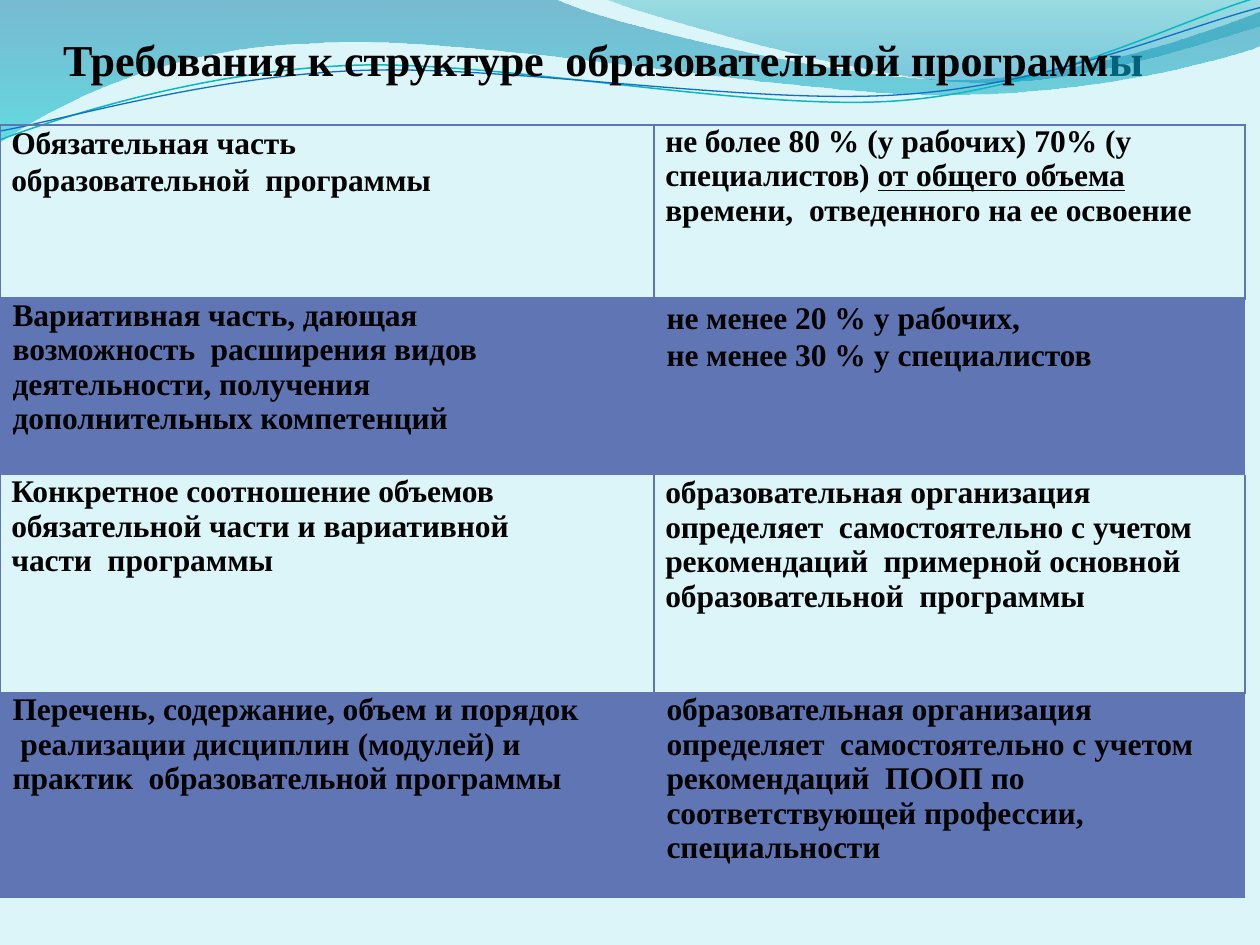
"""Build the slide on the structure requirements of an educational programme."""
import math
from lxml import etree
from pptx import Presentation
from pptx import util as u
from pptx.dml import color
from pptx.enum import text
from pptx.oxml import ns

FONT, BLUE = "Times New Roman", "6076B4"

prs = Presentation()
prs.slide_width, prs.slide_height = u.Inches(10), u.Inches(7.5)
STEP = prs.slide_width // 1000
s = prs.slides.add_slide(prs.slide_layouts[6])


def rgb(code):
    return color.RGBColor.from_string(code)


def add_runs(p, marked, size):
    for i, part in enumerate(marked.split("|")):
        if not part:
            continue
        r = p.add_run()
        r.text = part
        r.font.name, r.font.size, r.font.bold = FONT, u.Pt(size), True
        r.font.color.rgb = rgb("000000")
        if part in ("от ", "общего ", "объема "):
            r.font.underline = True
        r._r.get_or_add_rPr().set("spc", "0" if i % 2 else "-5")


s.background.fill.solid()
s.background.fill.fore_color.rgb = rgb("DBF5F9")

waves = [
    ((-1, -1, 1002, 114), 0,
     [(0, 0), (440, -1), (476, 17, 664, 63, 758, 63), (853, 63, 958, 26, 1000, 9),
      (1001, 36), (983, 44, 870, 76, 746, 75), (622, 75, 382, 28, 257, 34),
      (129, 36, 46, 83, -1, 113)], [("0074A1", 45), ("00C6CF", 55)], None),
    ((479, -1, 521, 70), 0,
     [(479, -1), (509, 11, 682, 62, 769, 65), (856, 69, 961, 32, 1000, 21),
      (1000, 0)], [("00A1A9", 30), ("008BBF", 45)], None),
    ((-2, 22, 1002, 71), 357.3,
     [(0, 111), (48, 93, 158, 57, 277, 52), (395, 47, 593, 89, 713, 80),
      (833, 71, 938, 15, 998, -2)], None, ("0AB8BF", 0.85)),
    ((-2, 30, 1003, 58), 357.3,
     [(0, 104), (47, 96, 164, 61, 283, 56), (403, 51, 597, 84, 717, 75),
      (836, 67, 941, 21, 1000, 6)], None, ("0F6FC6", 0.75)),
]
for (left, top, width, height), turn, segments, stops, stroke in waves:
    anchors = [(x * STEP, y * STEP) for *_, x, y in segments]
    builder = s.shapes.build_freeform(*anchors[0])
    builder.add_line_segments(anchors[1:], close=bool(stops))
    sp = builder.convert_to_shape()
    sp.shadow.inherit = False
    sp.left, sp.top, sp.width, sp.height = (v * STEP for v in (left, top, width, height))
    sp.rotation = turn
    outline = next(sp._element.spPr.iter(ns.qn("a:path")))
    outline.set("w", str(width * STEP))
    outline.set("h", str(height * STEP))
    cos, sin = math.cos(math.radians(-turn)), math.sin(math.radians(-turn))
    for seg, command in zip(segments, list(outline)):
        if len(seg) == 6:
            command.tag = ns.qn("a:cubicBezTo")
        for pt in list(command):
            command.remove(pt)
        for x, y in zip(seg[::2], seg[1::2]):
            dx, dy = x - left - width / 2, y - top - height / 2
            etree.SubElement(command, ns.qn("a:pt"),
                             x=str(round((dx * cos - dy * sin + width / 2) * STEP)),
                             y=str(round((dx * sin + dy * cos + height / 2) * STEP)))
    if stops:
        sp.line.fill.background()
        sp.fill.gradient()
        sp.fill.gradient_angle = 270
        for stop, (code, opacity), place in zip(sp.fill.gradient_stops, stops, (0, 1)):
            stop.color.rgb, stop.position = rgb(code), place
        for srgb, (code, opacity) in zip(sp._element.spPr.iter(ns.qn("a:srgbClr")), stops):
            etree.SubElement(srgb, ns.qn("a:alpha"), val=str(opacity * 1000))
    else:
        sp.fill.background()
        sp.line.color.rgb, sp.line.width = rgb(stroke[0]), u.Pt(stroke[1])

sp = s.shapes.add_textbox(50 * STEP, 21 * STEP, 922 * STEP, 47 * STEP)
tf = sp.text_frame
tf.word_wrap, tf.vertical_anchor = True, text.MSO_ANCHOR.BOTTOM
tf.margin_left = tf.margin_right = tf.margin_bottom = 0
p = tf.paragraphs[0]
add_runs(p, "Требования |к |структуре  образовательной программ||ы", 25.2)
p.runs[-1].font.color.rgb = rgb("04617B")

columns, heights = (519, 469), (138, 140, 173, 163)
borders = [{"L": 1, "R": 1, "T": 1, "B": 2}, {"T": 2}, {"L": 1, "R": 1, "B": 1}, {"T": 1}]
rows = [
    [(110, 21, 3.3, ["Обязательная часть образовательной  программы"]),
     (20, 0.99, 2.2, ["не более |80 % (у |рабочих) |70% (у  |специалистов) ||от |общего |"
                      "объема |времени,  |отведенного на |ее |освоение"])],
    [(90, 0.99, 3.7, ["Вариативная часть, дающая возможность  расширения видов "
                      "деятельности, получения  дополнительных компетенций"]),
     (20, 21.3, 3.6, ["не менее |20 % у |рабочих,", "не менее |30 % у |специалистов"])],
    [(90, 0.99, 2.2, ["Конкретное соотношение объемов  обязательной части |и |"
                      "вариативной части  программы"]),
     (20, 1.0, 2, ["образовательная организация определяет  самостоятельно |с |"
                   "учетом рекомендаций  примерной основной образовательной  программы"])],
    [(58, 0.99, 2.7, ["Перечень, содержание, объем |и |порядок  реализации |дисциплин |"
                      "(модулей) |и |практик  образовательной |программы"]),
     (20, 0.99, 2.7, ["образовательная организация определяет  самостоятельно |с |"
                      "учетом рекомендаций  |ПООП по |соответствующей |"
                      "профессии, специальности"])],
]
table = s.shapes.add_table(len(rows), len(columns), 0, 99 * STEP,
                           sum(columns) * STEP, sum(heights) * STEP).table
table.first_row = table.horz_banding = False
for column, width in zip(table.columns, columns):
    column.width = width * STEP
for i, (row, height) in enumerate(zip(rows, heights)):
    table.rows[i].height = height * STEP
    for j, (right, spacing, before, paragraphs) in enumerate(row):
        cell = table.cell(i, j)
        cell.margin_left = cell.margin_right = cell.margin_top = cell.margin_bottom = 0
        for side in "LRTB":
            points = borders[i].get(side, 0)
            ln = etree.SubElement(cell._tc.get_or_add_tcPr(), ns.qn(f"a:ln{side}"),
                                  w=str(u.Pt(points)))
            if points:
                solid = etree.SubElement(ln, ns.qn("a:solidFill"))
                etree.SubElement(solid, ns.qn("a:srgbClr"), val=BLUE)
            else:
                etree.SubElement(ln, ns.qn("a:noFill"))
        if i % 2:
            cell.fill.solid()
            cell.fill.fore_color.rgb = rgb(BLUE)
        else:
            cell.fill.background()
        tf = cell.text_frame
        for k, marked in enumerate(paragraphs):
            p = tf.add_paragraph() if k else tf.paragraphs[0]
            p.line_spacing = u.Pt(spacing) if spacing > 2 else spacing
            p.space_before = u.Pt(0 if k else before)
            pPr = p._p.get_or_add_pPr()
            pPr.set("marL", str((10 if i % 2 else 9) * STEP))
            pPr.set("marR", str(right * STEP))
            add_runs(p, marked, 18)

prs.save("out.pptx")
